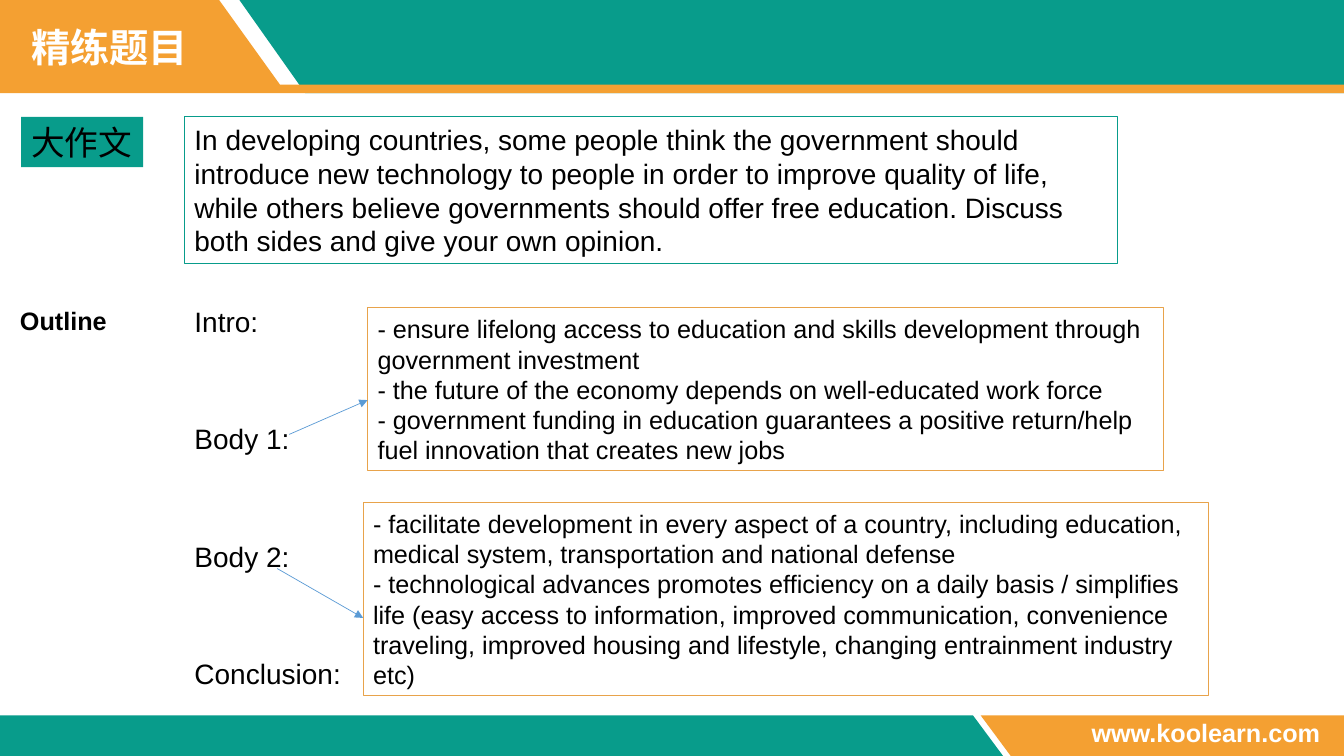
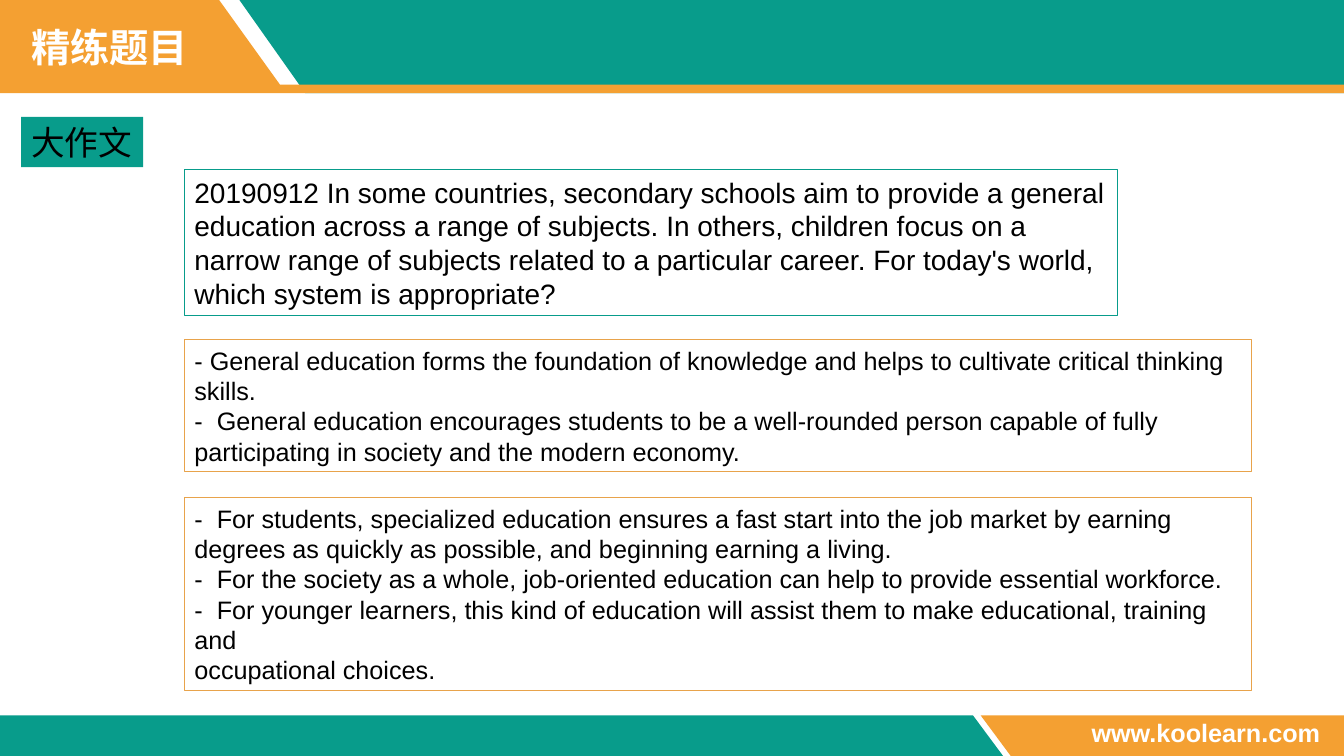
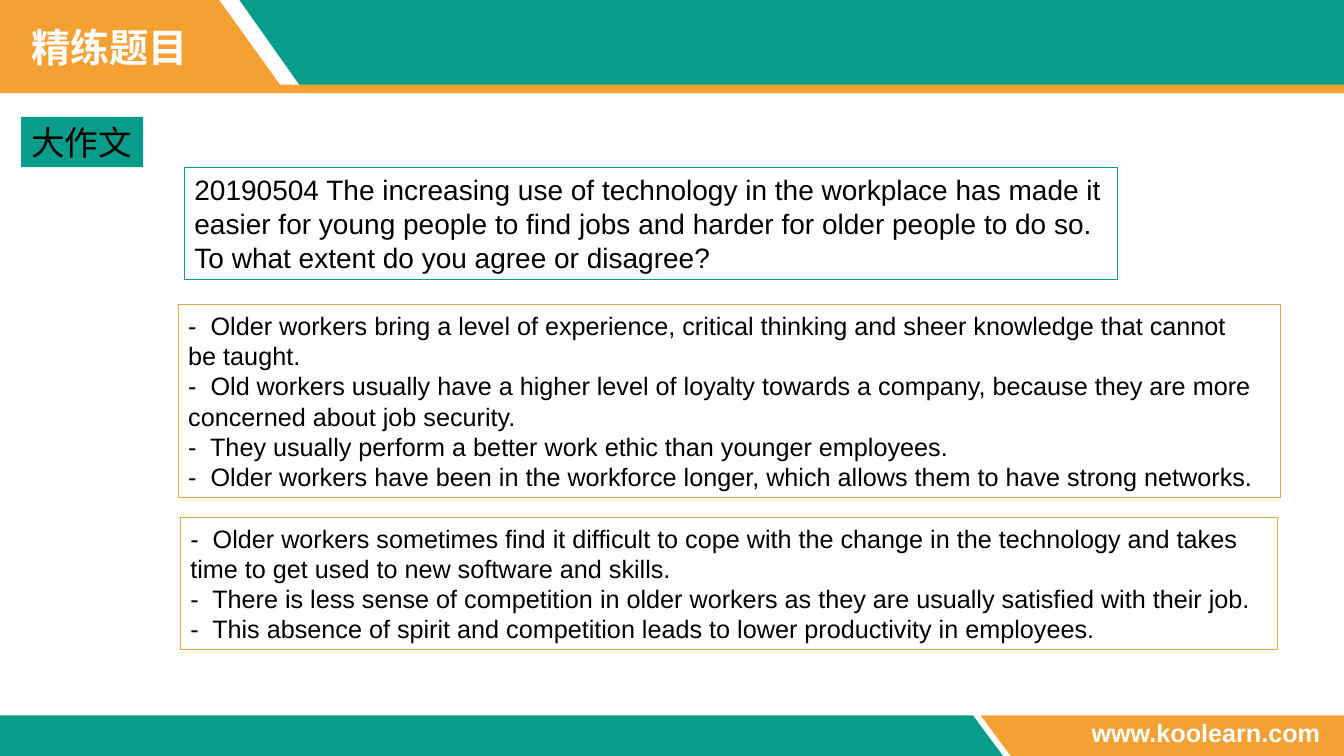
"""Build three essay practice slides with a shared header, footer and section tag."""
from lxml import etree
from pptx import Presentation
from pptx.dml.color import RGBColor
from pptx.enum import shapes, text
from pptx.oxml import ns
from pptx.util import Pt

TEAL = RGBColor(0x08, 0x9C, 0x8B)
ORANGE = RGBColor(0xF4, 0xA0, 0x32)
AMBER = RGBColor(0xE8, 0xA3, 0x4B)
BLUE = RGBColor(0x5B, 0x9B, 0xD5)
WHITE = RGBColor(0xFF, 0xFF, 0xFF)
BLACK = RGBColor(0, 0, 0)

WIDTH, HEIGHT = 960, 540
HEADER_BOTTOM, STRIPE_TOP, FOOTER_TOP = 66.5, 60.5, 511
QUESTION_LEFT, QUESTION_WIDTH = 131.8, 666.7

BANDS = [
    (TEAL, [(171, 0), (218, HEADER_BOTTOM), (WIDTH, HEADER_BOTTOM), (WIDTH, 0)]),
    (ORANGE, [(0, 0), (156.5, 0), (200, STRIPE_TOP), (WIDTH, STRIPE_TOP),
              (WIDTH, HEADER_BOTTOM), (0, HEADER_BOTTOM)]),
    (TEAL, [(0, FOOTER_TOP), (695, FOOTER_TOP), (716.5, HEIGHT), (0, HEIGHT)]),
    (ORANGE, [(700.5, FOOTER_TOP), (WIDTH, FOOTER_TOP), (WIDTH, HEIGHT), (722, HEIGHT)]),
]

SLIDES = [
    {
        "question": (83.5, 104.4, "In developing countries, some people think the government should introduce new technology to people in order to improve quality of life, while others believe governments should offer free education. Discuss both sides and give your own opinion."),
        "outline": ["Intro:", "Body 1:", "Body 2:", "Conclusion:"],
        "ideas": [
            ((262.6, 219.7, 568.8, 116.6), [
                "- ensure lifelong access to education and skills development through government investment",
                "- the future of the economy depends on well-educated work force",
                "- government funding in education guarantees a positive return/help fuel innovation that creates new jobs",
            ]),
            ((259.4, 358.9, 604, 138), [
                "- facilitate development in every aspect of a country, including education, medical system, transportation and national defense",
                "- technological advances promotes efficiency on a daily basis / simplifies life (easy access to information, improved communication, convenience traveling, improved housing and lifestyle, changing entrainment industry etc)",
            ]),
        ],
        "arrows": [((206.6, 310.3), (262.6, 285.8)), ((198, 406.1), (259.4, 441.4))],
    },
    {
        "question": (121, 104.4, "20190912 In some countries, secondary schools aim to provide a general education across a range of subjects. In others, children focus on a narrow range of subjects related to a particular career. For today's world, which system is appropriate?"),
        "ideas": [
            ((131.8, 242.6, 762, 94.5), [
                "- General education forms the foundation of knowledge and helps to cultivate critical thinking",
                "skills.",
                "-  General education encourages students to be a well-rounded person capable of fully",
                "participating in society and the modern economy.",
            ]),
            ((131.8, 355.2, 762, 138), [
                "-  For students, specialized education ensures a fast start into the job market by earning",
                "degrees as quickly as possible, and beginning earning a living.",
                "-  For the society as a whole, job-oriented education can help to provide essential workforce.",
                "-  For younger learners, this kind of education will assist them to make educational, training and",
                "occupational choices.",
            ]),
        ],
    },
    {
        "question": (119.5, 80, "20190504 The increasing use of technology in the workplace has made it easier for young people to find jobs and harder for older people to do so. To what extent do you agree or disagree?"),
        "ideas": [
            ((127.4, 217.4, 787, 138), [
                "-  Older workers bring a level of experience, critical thinking and sheer knowledge that cannot",
                "be taught.",
                "-  Old workers usually have a higher level of loyalty towards a company, because they are more",
                "concerned about job security.",
                "-  They usually perform a better work ethic than younger employees.",
                "-  Older workers have been in the workforce longer, which allows them to have strong networks.",
            ]),
            ((128.9, 369.4, 783.4, 94.5), [
                "-  Older workers sometimes find it difficult to cope with the change in the technology and takes",
                "time to get used to new software and skills.",
                "-  There is less sense of competition in older workers as they are usually satisfied with their job.",
                "-  This absence of spirit and competition leads to lower productivity in employees.",
            ]),
        ],
    },
]


def write(slide, at, lines, size=18, font="Arial", color=BLACK, bold=False, fill=None,
          line=None, wrap=True, spacing=None, after=0):
    """Write paragraphs in a plain text box, or in a rectangle if fill or line is given."""
    place = [Pt(length) for length in at]
    if fill or line:
        box = slide.shapes.add_shape(shapes.MSO_SHAPE.RECTANGLE, *place)
        box.shadow.inherit = False
        paint(box, fill, line)
        box.text_frame.vertical_anchor = text.MSO_ANCHOR.MIDDLE
    else:
        box = slide.shapes.add_textbox(*place)
    frame = box.text_frame
    frame.word_wrap = wrap
    frame.text = "\n".join(lines)
    for paragraph in frame.paragraphs:
        paragraph.alignment = text.PP_ALIGN.LEFT
        paragraph.line_spacing = spacing
        paragraph.space_after = Pt(after)
        for run in paragraph.runs:
            run.font.size, run.font.name, run.font.bold = Pt(size), font, bold
            run.font.color.rgb = color


def paint(shape, fill, line):
    """Set fill and outline, leaving out whichever is None."""
    if fill:
        shape.fill.solid()
        shape.fill.fore_color.rgb = fill
    else:
        shape.fill.background()
    if line:
        shape.line.color.rgb = line
        shape.line.width = Pt(0.75)
    else:
        shape.line.fill.background()


def add_frame(slide):
    """Draw the bands, title, section tag and web address."""
    for color, points in BANDS:
        corners = [(Pt(x), Pt(y)) for x, y in points]
        builder = slide.shapes.build_freeform(*corners[0], scale=1.0)
        builder.add_line_segments(corners[1:], close=True)
        band = builder.convert_to_shape()
        band.shadow.inherit = False
        paint(band, color, None)
    write(slide, (772.6, 509, 179.3, 29), ["www.koolearn.com"], color=WHITE, bold=True, wrap=False)
    write(slide, (15.1, 13, 127.4, 41), ["精练题目"], size=28, font="Montserrat",
          color=WHITE, bold=True, wrap=False)
    write(slide, (15.1, 83.5, 87.1, 36), ["大作文"], size=24, fill=TEAL, wrap=False)


def add_arrow(slide, start, end):
    """Draw a thin blue arrow."""
    arrow = slide.shapes.add_connector(
        shapes.MSO_CONNECTOR.STRAIGHT, *[Pt(length) for length in start + end])
    arrow.line.color.rgb = BLUE
    arrow.line.width = Pt(0.5)
    etree.SubElement(arrow.line._get_or_add_ln(), ns.qn("a:tailEnd"), type="triangle")
    etree.SubElement(arrow._element.spPr, ns.qn("a:effectLst"))


def main():
    """Build and save the deck."""
    deck = Presentation()
    deck.slide_width, deck.slide_height = Pt(WIDTH), Pt(HEIGHT)
    for content in SLIDES:
        slide = deck.slides.add_slide(deck.slide_layouts[6])
        add_frame(slide)
        top, height, question = content["question"]
        write(slide, (QUESTION_LEFT, top, QUESTION_WIDTH, height), [question], size=20, line=TEAL)
        if "outline" in content:
            write(slide, (QUESTION_LEFT, 216.7, QUESTION_WIDTH, 285), content["outline"],
                  size=20, spacing=0.9, after=62.2)
            write(slide, (7.2, 216.7, 77, 26.6), ["Outline"], bold=True, wrap=False, spacing=0.9)
        for place, ideas in content["ideas"]:
            write(slide, place, ideas, line=AMBER)
        for start, end in content.get("arrows", []):
            add_arrow(slide, start, end)
    deck.save("out.pptx")


if __name__ == "__main__":
    main()
